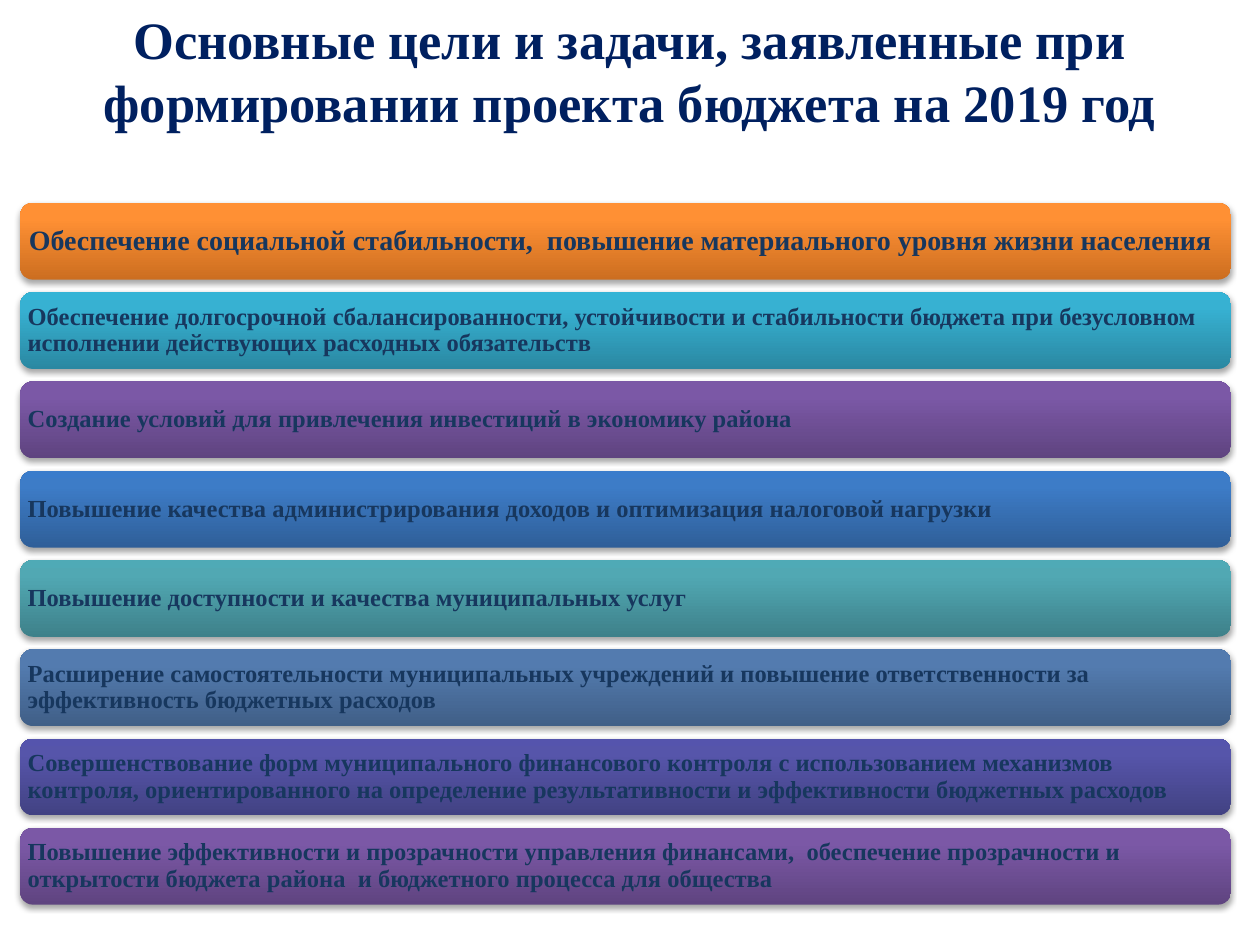
from lxml.etree import SubElement
from pptx import Presentation
from pptx.dml.color import RGBColor
from pptx.enum.shapes import MSO_SHAPE as Shape
from pptx.enum.text import MSO_ANCHOR as Anchor, PP_ALIGN as Align
from pptx.oxml.ns import qn
from pptx.util import Inches, Pt

FONT = "Times New Roman"
TITLE_COLOR = RGBColor(0x00, 0x20, 0x60)
GOAL_COLOR = RGBColor(0x17, 0x37, 0x5E)

# Gradients from the bottom edge up: positions 0, 80 and 100 percent
STOPS = (0, 80, 100)
ORANGE = ("CC6E20", "FF9034", "FF9136")
CYAN = ("2A88A2", "37B1D2", "34B4D6")
PURPLE = ("5F4480", "7B58A6", "7C57A8")
BLUE = ("2F5F99", "3D7CC7", "3A7CCB")
TEAL = ("3E818A", "51A8B3", "4FAAB6")
STEEL = ("405F87", "537BAF", "527CB1")
INDIGO = ("424283", "5655AA", "5554AD")

TITLE = (
    "Основные цели и задачи, заявленные при",
    "формировании проекта бюджета на 2019 год",
)
# Wording, gradient, font size, inner margin
GOALS = [
    ("Обеспечение социальной стабильности,  повышение материального уровня жизни населения",
     ORANGE, 16, 0.04),
    ("Обеспечение долгосрочной сбалансированности, устойчивости и стабильности бюджета "
     "при безусловном исполнении действующих расходных обязательств", CYAN, 14, 0.03),
    ("Создание условий для привлечения инвестиций в экономику района", PURPLE, 14, 0.03),
    ("Повышение качества администрирования доходов и оптимизация налоговой нагрузки",
     BLUE, 14, 0.03),
    ("Повышение доступности и качества муниципальных услуг", TEAL, 14, 0.03),
    ("Расширение самостоятельности муниципальных учреждений и повышение ответственности "
     "за эффективность бюджетных расходов", STEEL, 14, 0.03),
    ("Совершенствование форм муниципального финансового контроля с использованием "
     "механизмов контроля, ориентированного на определение результативности и "
     "эффективности бюджетных расходов", INDIGO, 14, 0.03),
    ("Повышение эффективности и прозрачности управления финансами,  обеспечение "
     "прозрачности и открытости бюджета района  и бюджетного процесса для общества",
     PURPLE, 14, 0.03),
]

BAR_LEFT, BAR_WIDTH, BAR_HEIGHT = 0.16, 9.61, 0.61
FIRST_TOP, LAST_TOP = 1.61, 6.57
BAR_STEP = (LAST_TOP - FIRST_TOP) / (len(GOALS) - 1)


def style(paragraph, size, color):
    font = paragraph.font
    font.name, font.size, font.bold = FONT, Pt(size), True
    font.color.rgb = color


def add_color(parent, color):
    return SubElement(parent, qn("a:srgbClr"), val=color)


def fill_gradient(bar, colors):
    bar.fill.gradient()
    bar.fill.gradient_angle = 90
    stop_list = bar.fill._xPr.find(qn("a:gradFill")).find(qn("a:gsLst"))
    for stop in list(stop_list):
        stop_list.remove(stop)
    for position, color in zip(STOPS, colors):
        add_color(SubElement(stop_list, qn("a:gs"), pos=str(position * 1000)), color)


def add_shadow(bar):
    bar.shadow.inherit = False
    effects = bar._element.spPr.find(qn("a:effectLst"))
    shadow = SubElement(effects, qn("a:outerShdw"), blurRad=str(Pt(3.1)),
                        dist=str(Pt(1.8)), dir="5400000", rotWithShape="0")
    SubElement(add_color(shadow, "000000"), qn("a:alpha"), val="35000")


deck = Presentation()
deck.slide_width, deck.slide_height = Inches(10), Inches(7.5)
slide = deck.slides.add_slide(deck.slide_layouts[6])

# Title
title = slide.shapes.add_textbox(0, 0, Inches(10), Inches(1.11)).text_frame
title.word_wrap = True
title.vertical_anchor = Anchor.MIDDLE
title.text = "\n".join(TITLE)
for line in title.paragraphs:
    line.alignment = Align.CENTER
    style(line, 30, TITLE_COLOR)

# Goal bars
for row, (wording, colors, size, margin) in enumerate(GOALS):
    bar = slide.shapes.add_shape(
        Shape.ROUNDED_RECTANGLE, Inches(BAR_LEFT), Inches(FIRST_TOP + row * BAR_STEP),
        Inches(BAR_WIDTH), Inches(BAR_HEIGHT))
    fill_gradient(bar, colors)
    bar.line.fill.background()
    add_shadow(bar)

    frame = bar.text_frame
    frame.word_wrap = True
    frame.vertical_anchor = Anchor.MIDDLE
    frame.margin_left = frame.margin_right = Inches(margin)
    frame.margin_top = frame.margin_bottom = Inches(margin)
    frame.text = wording
    goal = frame.paragraphs[0]
    goal.alignment = Align.LEFT
    goal.line_spacing = 0.9
    style(goal, size, GOAL_COLOR)

deck.save("out.pptx")
